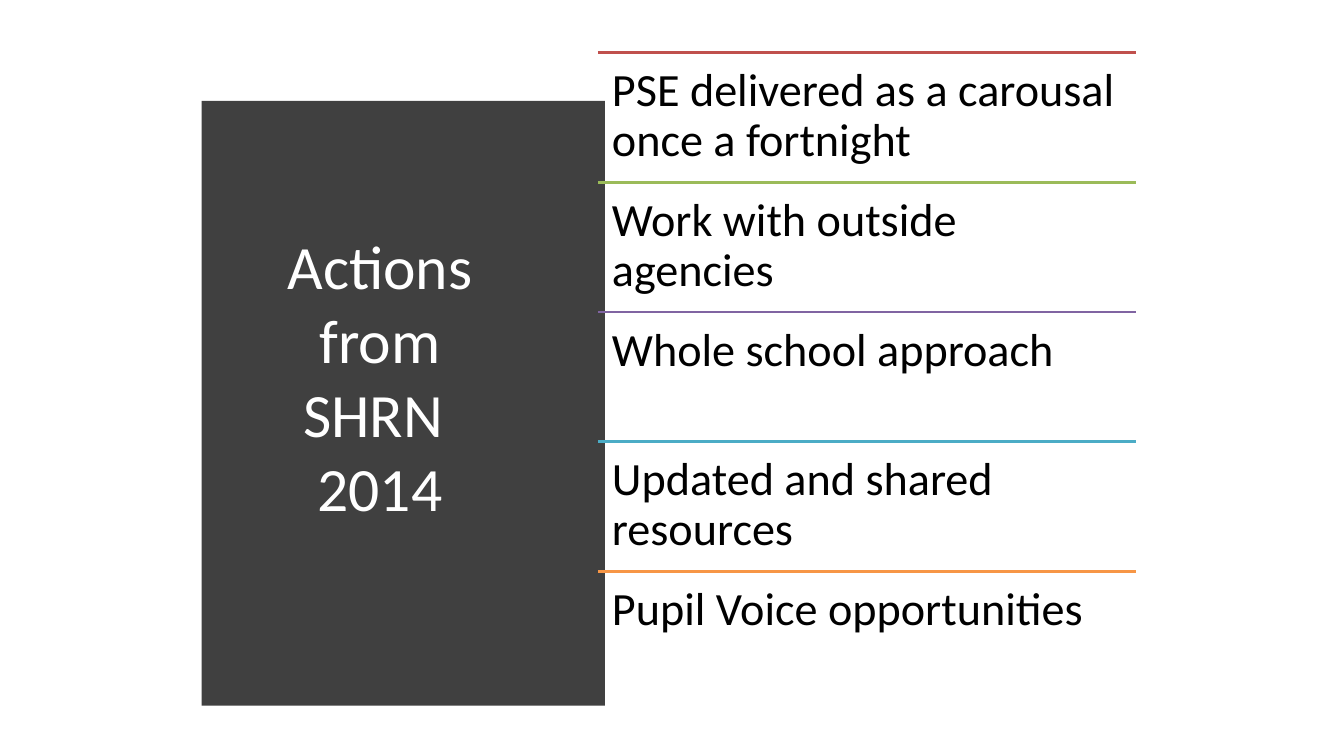
from lxml import etree
from pptx import Presentation
from pptx import util as u
from pptx.dml.color import RGBColor
from pptx.enum import shapes, text
from pptx.oxml import ns

FONT = "Calibri"
WHITE = RGBColor(0xFF, 0xFF, 0xFF)
BLACK = RGBColor(0x00, 0x00, 0x00)
CHARCOAL = RGBColor(0x40, 0x40, 0x40)
RED = RGBColor(0xC0, 0x50, 0x4D)
GREEN = RGBColor(0x9B, 0xBB, 0x59)
PURPLE = RGBColor(0x80, 0x64, 0xA2)
TEAL = RGBColor(0x4B, 0xAC, 0xC6)
ORANGE = RGBColor(0xF7, 0x96, 0x46)

SLIDE_WIDTH, SLIDE_HEIGHT = 13.33, 7.5
TOP, HEIGHT = 0.52, 6.44
PANEL_BOX = (2.06, TOP, 3.6, HEIGHT)
LIST_BOX = (5.93, TOP, 5.34, HEIGHT)

TITLE = "Actions\vfrom SHRN \v2014"
ACTIONS = [
    ("PSE delivered as a carousal once a fortnight", RED),
    ("Work with outside agencies", GREEN),
    ("Whole school approach", PURPLE),
    ("Updated and shared resources", TEAL),
    ("Pupil Voice opportunities", ORANGE),
]


def format_runs(paragraph, size, color):
    for run in paragraph.runs:
        run.font.name = FONT
        run.font.size = u.Pt(size)
        run.font.color.rgb = color


def add_curved_panel(slide, box, bulge=0.19, steps=40):
    """Draw a panel whose right side bows outwards by the bulge."""
    left, top, width, height = box
    side = left + width - bulge
    curve = []
    for step in range(steps + 1):
        offset = 2 * step / steps - 1
        curve.append((side + bulge * (1 - abs(offset) ** 2.2),
                      top + height * step / steps))
    builder = slide.shapes.build_freeform(left, top, scale=u.Inches(1))
    builder.add_line_segments(curve + [(left, top + height)], close=True)
    panel = builder.convert_to_shape()
    panel.shadow.inherit = False
    panel.fill.solid()
    panel.fill.fore_color.rgb = CHARCOAL
    panel.line.fill.background()


def place_title(slide, box):
    left, top, width, height = box
    title = slide.shapes.title
    title.left, title.top = u.Inches(left + 0.31), u.Inches(top + 0.59)
    title.width, title.height = u.Inches(width - 0.8), u.Inches(height - 1.2)
    frame = title.text_frame
    frame.text = TITLE
    frame.word_wrap = True
    frame.auto_size = text.MSO_AUTO_SIZE.NONE
    frame.vertical_anchor = text.MSO_ANCHOR.MIDDLE
    paragraph = frame.paragraphs[0]
    paragraph.alignment = text.PP_ALIGN.CENTER
    format_runs(paragraph, 44, WHITE)


def add_rule(slide, left, top, width, color):
    rule = slide.shapes.add_connector(
        shapes.MSO_CONNECTOR.STRAIGHT, u.Inches(left), u.Inches(top),
        u.Inches(left + width), u.Inches(top))
    rule.line.color.rgb = color
    rule.line.width = u.Pt(2)
    etree.SubElement(rule.element.spPr, ns.qn("a:effectLst"))


def add_action_list(slide, box):
    left, top, width, height = box
    row_height = height / len(ACTIONS)
    for row, (action, color) in enumerate(ACTIONS):
        row_top = top + row * row_height
        add_rule(slide, left, row_top, width, color)
        label = slide.shapes.add_textbox(
            u.Inches(left), u.Inches(row_top),
            u.Inches(width), u.Inches(row_height))
        frame = label.text_frame
        frame.word_wrap = True
        frame.margin_left = frame.margin_right = u.Inches(0.14)
        frame.margin_top = frame.margin_bottom = u.Inches(0.14)
        frame.text = action
        paragraph = frame.paragraphs[0]
        paragraph.line_spacing = 0.9
        format_runs(paragraph, 33, BLACK)


def build_actions_slide(presentation):
    title_only = presentation.slide_layouts[5]
    slide = presentation.slides.add_slide(title_only)
    add_curved_panel(slide, PANEL_BOX)
    # The title is drawn above the panel
    tree = slide.shapes.element
    tree.append(slide.shapes.title.element)
    place_title(slide, PANEL_BOX)
    add_action_list(slide, LIST_BOX)


def main():
    presentation = Presentation()
    presentation.slide_width = u.Inches(SLIDE_WIDTH)
    presentation.slide_height = u.Inches(SLIDE_HEIGHT)
    build_actions_slide(presentation)
    presentation.save("out.pptx")


if __name__ == "__main__":
    main()
